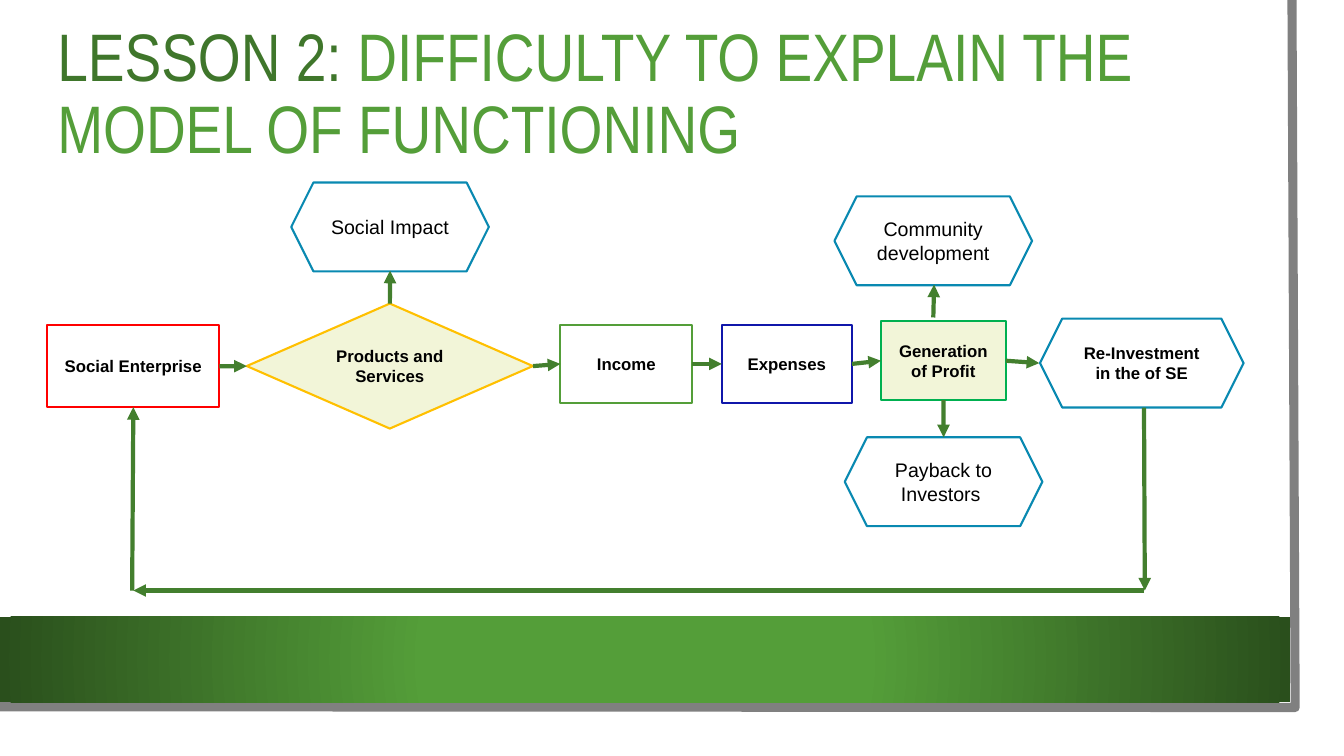
from lxml import etree
from pptx import Presentation
from pptx.dml.color import RGBColor
from pptx.enum.shapes import MSO_CONNECTOR, MSO_SHAPE
from pptx.enum.text import MSO_ANCHOR, MSO_AUTO_SIZE, PP_ALIGN
from pptx.oxml import parse_xml
from pptx.oxml.ns import nsdecls, qn
from pptx.util import Cm, Pt

RECTANGLE = MSO_SHAPE.RECTANGLE
DECISION = MSO_SHAPE.FLOWCHART_DECISION
HEXAGON = MSO_SHAPE.HEXAGON
STRAIGHT = MSO_CONNECTOR.STRAIGHT
TOP, LEFT, BOTTOM, RIGHT = range(4)

COLORS = {
    "white": "FFFFFF", "black": "000000", "gray": "808080",
    "cream": "F2F5D8", "red": "FF0000", "gold": "FFC000",
    "green": "549E39", "navy": "1017AA", "emerald": "00B050",
    "blue": "0989B1", "arrow": "437F2E", "dark green": "3F762B",
    "band edge": "2A4F1C",
}


def rgb(name):
    return RGBColor.from_string(COLORS[name])


def add_run(paragraph, text, font_name, size, color, bold=False):
    run = paragraph.add_run()
    run.text = text
    run.font.name = font_name
    run.font.size = Pt(size)
    run.font.bold = bold
    run.font.color.rgb = rgb(color)


presentation = Presentation()
presentation.slide_width = Cm(33.87)
presentation.slide_height = Cm(19.05)
slide = presentation.slides.add_slide(presentation.slide_layouts[5])
shapes = slide.shapes

# Gray page edge on the right and at the bottom
builder = shapes.build_freeform(Cm(32.56), Cm(0))
builder.add_line_segments([(Cm(32.64), Cm(17.83)), (Cm(-0.08), Cm(17.81))], close=False)
page_edge = builder.convert_to_shape()
page_edge.shadow.inherit = False
page_edge.fill.background()
page_edge.line.color.rgb = rgb("gray")
page_edge.line.width = Pt(6.5)

# Green band with a radial gradient
band = shapes.add_shape(RECTANGLE, Cm(0), Cm(15.54), Cm(32.51), Cm(2.16))
band.shadow.inherit = False
band.line.fill.background()
gradient = parse_xml(
    f'<a:gradFill {nsdecls("a")} rotWithShape="1"><a:gsLst>'
    f'<a:gs pos="34000"><a:srgbClr val="{COLORS["green"]}"/></a:gs>'
    f'<a:gs pos="100000"><a:srgbClr val="{COLORS["band edge"]}"/></a:gs>'
    '</a:gsLst><a:path path="circle">'
    '<a:fillToRect l="50000" t="50000" r="50000" b="50000"/>'
    '</a:path></a:gradFill>')
band._element.spPr.find(qn("a:prstGeom")).addnext(gradient)

# Title
title = shapes.title
title.left, title.top, title.width, title.height = Cm(1.19), Cm(0.74), Cm(30.18), Cm(3.35)
title_frame = title.text_frame
title_frame.word_wrap = True
title_frame.auto_size = MSO_AUTO_SIZE.NONE
title_frame.vertical_anchor = MSO_ANCHOR.MIDDLE
paragraph = title_frame.paragraphs[0]
paragraph.alignment = PP_ALIGN.LEFT
paragraph.line_spacing = 0.9
add_run(paragraph, "LESSON 2:", "Arial Narrow", 48, "dark green")
add_run(paragraph, " DIFFICULTY TO EXPLAIN THE MODEL OF FUNCTIONING",
        "Arial Narrow", 48, "green")

# Flow steps: text, shape, left, top, width, height, fill, line, size, bold
steps = [
    ("Social Enterprise", RECTANGLE, 1.19, 8.2, 4.34, 2.06, "white", "red", 12, True),
    ("Products and Services", DECISION, 6.22, 7.65, 7.21, 3.15, "cream", "gold", 12, True),
    ("Income", RECTANGLE, 14.12, 8.18, 3.33, 1.98, "white", "green", 12, True),
    ("Expenses", RECTANGLE, 18.19, 8.18, 3.28, 1.98, "white", "navy", 12, True),
    ("Generation of Profit", RECTANGLE, 22.2, 8.1, 3.15, 1.98, "cream", "emerald", 12, True),
    ("Social Impact", HEXAGON, 7.34, 4.6, 4.98, 2.24, "white", "blue", 14, False),
    ("Payback to Investors ", HEXAGON, 21.29, 11.02, 4.98, 2.24, "white", "blue", 14, False),
    ("Community development", HEXAGON, 21.03, 4.95, 4.98, 2.24, "white", "blue", 14, False),
    ("Re-Investment in the of SE", HEXAGON, 26.21, 8.03, 5.13, 2.24, "white", "blue", 12, True),
]
boxes = {}
for text, kind, left, top, width, height, fill, line, size, bold in steps:
    shape = shapes.add_shape(kind, Cm(left), Cm(top), Cm(width), Cm(height))
    shape.shadow.inherit = False
    shape.fill.solid()
    shape.fill.fore_color.rgb = rgb(fill)
    shape.line.color.rgb = rgb(line)
    shape.line.width = Pt(1.5)
    shape.text_frame.word_wrap = True
    shape.text_frame.vertical_anchor = MSO_ANCHOR.MIDDLE
    paragraph = shape.text_frame.paragraphs[0]
    paragraph.alignment = PP_ALIGN.CENTER
    add_run(paragraph, text, "Arial", size, "black", bold)
    boxes[text] = shape

# Arrows: each end is a point in cm or a (step, side) joint
arrows = [
    ((28.83, 10.27), (28.85, 14.88)),
    ((28.83, 14.88), (3.36, 14.88)),
    ((3.33, 14.88), ("Social Enterprise", BOTTOM)),
    (("Social Enterprise", RIGHT), ("Products and Services", LEFT)),
    (("Products and Services", RIGHT), ("Income", LEFT)),
    (("Income", RIGHT), ("Expenses", LEFT)),
    (("Expenses", RIGHT), ("Generation of Profit", LEFT)),
    (("Generation of Profit", RIGHT), (26.19, 9.15)),
    (("Products and Services", TOP), (9.83, 6.82)),
    ((23.52, 8.0), (23.54, 7.17)),
    (("Generation of Profit", BOTTOM), (23.78, 11.02)),
]
for start, end in arrows:
    points = [(0, 0) if point[0] in boxes else point for point in (start, end)]
    (start_x, start_y), (end_x, end_y) = points
    arrow = shapes.add_connector(STRAIGHT, Cm(start_x), Cm(start_y), Cm(end_x), Cm(end_y))
    if start[0] in boxes:
        arrow.begin_connect(boxes[start[0]], start[1])
    if end[0] in boxes:
        arrow.end_connect(boxes[end[0]], end[1])
    arrow.line.color.rgb = rgb("arrow")
    arrow.line.width = Pt(3)
    etree.SubElement(arrow.line._get_or_add_ln(), qn("a:tailEnd"), type="triangle")
    etree.SubElement(arrow._element.spPr, qn("a:effectLst"))

presentation.save("out.pptx")
